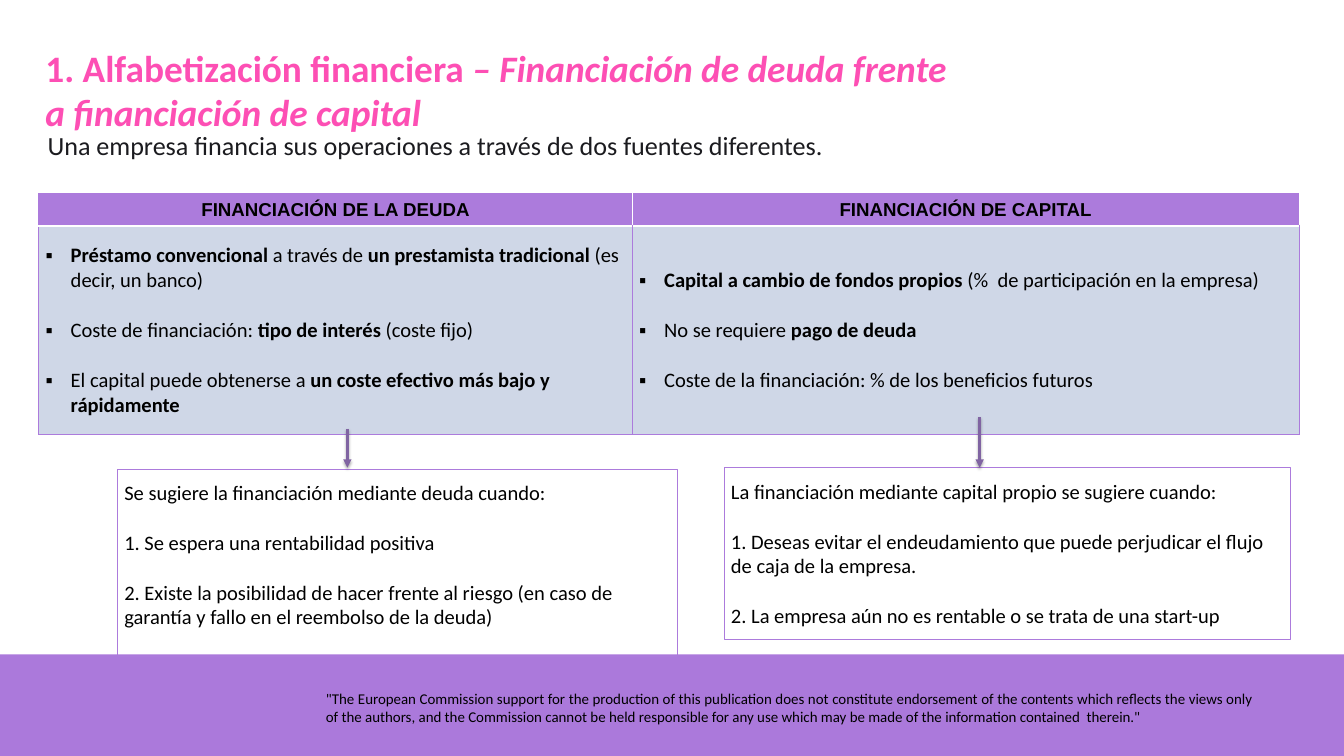
from lxml.etree import SubElement
from pptx import Presentation
from pptx.dml.color import RGBColor
from pptx.enum.shapes import MSO_CONNECTOR, MSO_SHAPE
from pptx.enum.text import MSO_ANCHOR, PP_ALIGN
from pptx.oxml import parse_xml
from pptx.oxml.ns import nsdecls, qn
from pptx.util import Cm, Pt

PURPLE = RGBColor(0xAC, 0x7B, 0xDC)
BAND = RGBColor(0xAB, 0x79, 0xDB)
PINK = RGBColor(0xFD, 0x4F, 0xB4)
INK = RGBColor(0x1B, 0x1B, 0x1F)
BLACK = RGBColor(0, 0, 0)
WHITE = RGBColor(0xFF, 0xFF, 0xFF)
CELL = RGBColor(0xCF, 0xD7, 0xE7)
ARROW = RGBColor(0x80, 0x64, 0xA2)
GAP = Pt(26.8)  # one text line between paragraphs

# A run is (text, style); style holds "b" for bold and "i" for italic
TITLE = [("1. Alfabetización financiera ", "b"),
         ("– Financiación de deuda frente a financiación de capital", "bi")]
SUBTITLE = [("Una empresa financia sus operaciones a través de dos fuentes diferentes.", "")]
DISCLAIMER = [('"The European Commission support for the production of this publication does not '
               'constitute endorsement of the contents which reflects the views only of the authors, '
               'and the Commission cannot be held responsible for any use which may be made of the '
               'information contained  therein."', "")]

COLUMNS = [
    ("FINANCIACIÓN DE LA DEUDA", 22.43, [
        [("Préstamo convencional ", "b"), ("a través de ", ""),
         ("un prestamista tradicional ", "b"), ("(es decir, un banco)", "")],
        [("Coste de financiación: ", ""), ("tipo de interés ", "b"), ("(coste fijo)", "")],
        [("El capital puede obtenerse a ", ""),
         ("un coste efectivo más bajo y rápidamente", "b")],
    ]),
    ("FINANCIACIÓN DE CAPITAL", 25.2, [
        [("Capital a cambio de fondos propios ", "b"),
         ("(%  de participación en la empresa)", "")],
        [("No se requiere ", ""), ("pago de deuda", "b")],
        [("Coste de la financiación: % de los beneficios futuros", "")],
    ]),
]
ROW_HEIGHTS = (1.22, 7.9)

# Box (left, top, width, height), its paragraphs
ADVICE = [
    ((4.45, 17.73, 21.16, 7.09), [
        "Se sugiere la financiación mediante deuda cuando:",
        "1. Se espera una rentabilidad positiva",
        "2. Existe la posibilidad de hacer frente al riesgo (en caso de garantía y fallo "
        "en el reembolso de la deuda)"]),
    ((27.38, 17.68, 21.39, 6.5), [
        "La financiación mediante capital propio se sugiere cuando:",
        "1. Deseas evitar el endeudamiento que puede perjudicar el flujo de caja de la empresa.",
        "2. La empresa aún no es rentable o se trata de una start-up"]),
]
ARROWS = [(13.13, 16.21, 17.68), (37.03, 15.77, 17.68)]  # x, top, bottom


def write(tf, paragraphs, size, color, align=PP_ALIGN.LEFT, font="Calibri", bullet=False):
    tf.word_wrap = True
    for n, runs in enumerate(paragraphs):
        p = tf.add_paragraph() if n else tf.paragraphs[0]
        p.alignment = align
        if n:
            p.space_before = GAP
        if bullet:
            add_bullet(p)
        for text, style in runs:
            r = p.add_run()
            r.text = text
            r.font.name, r.font.size = font, Pt(size)
            r.font.bold, r.font.italic = "b" in style, "i" in style
            r.font.color.rgb = color


def add_bullet(p):
    pPr = p._p.get_or_add_pPr()
    pPr.set("marL", str(Cm(0.95)))
    pPr.set("indent", str(-Cm(0.95)))
    SubElement(SubElement(pPr, qn("a:buClr")), qn("a:srgbClr")).set("val", str(BLACK))
    SubElement(pPr, qn("a:buFont")).set("typeface", "Arial")
    SubElement(pPr, qn("a:buChar")).set("char", "▪")


def set_borders(cell, **sides):
    """Each side (L, R, T, B) is a (colour, points) pair."""
    tcPr = cell._tc.get_or_add_tcPr()
    for n, side in enumerate("LRTB"):
        color, width = sides[side]
        tcPr.insert(n, parse_xml(
            f'<a:ln{side} {nsdecls("a")} w="{Pt(width)}"><a:solidFill>'
            f'<a:srgbClr val="{color}"/></a:solidFill></a:ln{side}>'))


def add_text(s, box, runs, size, color, align=PP_ALIGN.LEFT):
    tf = s.shapes.add_textbox(*map(Cm, box)).text_frame
    write(tf, [runs], size, color, align)
    return tf


def add_table(s):
    widths = [width for _, width, _ in COLUMNS]
    table = s.shapes.add_table(2, len(COLUMNS), Cm(1.47), Cm(7.32),
                               Cm(sum(widths)), Cm(sum(ROW_HEIGHTS))).table
    table.horz_banding = False
    for row, height in zip(table.rows, ROW_HEIGHTS):
        row.height = Cm(height)
    thin, white, rule = (PURPLE, 1), (WHITE, 1), (WHITE, 3)
    for n, (heading, width, points) in enumerate(COLUMNS):
        table.columns[n].width = Cm(width)
        head, body = table.cell(0, n), table.cell(1, n)
        for cell, fill in ((head, PURPLE), (body, CELL)):
            cell.fill.solid()
            cell.fill.fore_color.rgb = fill
            cell.vertical_anchor = MSO_ANCHOR.MIDDLE
        set_borders(head, L=white if n else thin, R=white, T=thin, B=rule)
        set_borders(body, L=thin, R=thin, T=rule, B=thin)
        write(head.text_frame, [[(heading, "b")]], 20, BLACK, PP_ALIGN.CENTER, "Arial")
        write(body.text_frame, points, 22, BLACK, bullet=True)


def add_advice(s, box, lines):
    sp = s.shapes.add_shape(MSO_SHAPE.RECTANGLE, *map(Cm, box))
    sp.shadow.inherit = False
    sp.fill.background()
    sp.line.color.rgb, sp.line.width = PURPLE, Pt(0.75)
    tf = sp.text_frame
    tf.vertical_anchor = MSO_ANCHOR.TOP
    tf.margin_top = Cm(0.43)
    write(tf, [[(line, "")] for line in lines], 22, BLACK)


def add_arrow(s, x, top, bottom):
    line = s.shapes.add_connector(MSO_CONNECTOR.STRAIGHT, Cm(x), Cm(top), Cm(x), Cm(bottom))
    line.line.color.rgb, line.line.width = ARROW, Pt(3)
    spPr = line._element.spPr
    SubElement(spPr.find(qn("a:ln")), qn("a:tailEnd")).set("type", "triangle")
    spPr.append(parse_xml(
        f'<a:effectLst {nsdecls("a")}><a:outerShdw blurRad="{Pt(3.1)}" dist="{Pt(1.8)}" '
        f'dir="5400000" rotWithShape="0"><a:srgbClr val="{BLACK}"><a:alpha val="35000"/>'
        '</a:srgbClr></a:outerShdw></a:effectLst>'))


def main():
    prs = Presentation()
    prs.slide_width, prs.slide_height = Cm(50.8), Cm(28.58)
    s = prs.slides.add_slide(prs.slide_layouts[6])

    band = s.shapes.add_shape(MSO_SHAPE.RECTANGLE, 0, Cm(24.74), Cm(50.8), Cm(3.84))
    band.shadow.inherit = False
    band.fill.solid()
    band.fill.fore_color.rgb = BAND
    band.line.fill.background()

    tf = add_text(s, (12.07, 25.93, 35.56, 1.4), DISCLAIMER, 16, BLACK, PP_ALIGN.JUSTIFY)
    tf.paragraphs[0].line_spacing = 1.01
    add_text(s, (1.47, 1.57, 34.72, 3.68), TITLE, 40, PINK)
    add_text(s, (1.55, 4.78, 38.89, 3.18), SUBTITLE, 28, INK, PP_ALIGN.JUSTIFY)
    add_table(s)
    for box, lines in ADVICE:
        add_advice(s, box, lines)
    for arrow in ARROWS:
        add_arrow(s, *arrow)
    prs.save("out.pptx")


if __name__ == "__main__":
    main()
